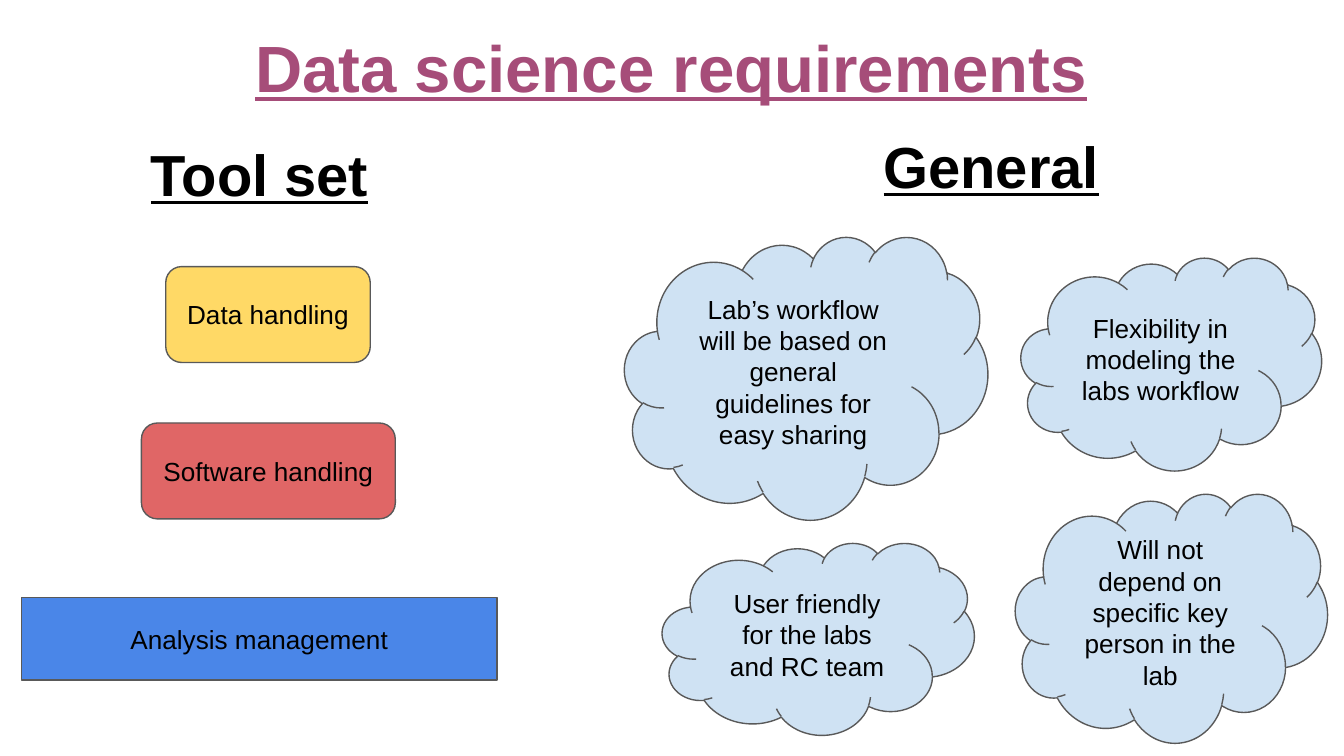
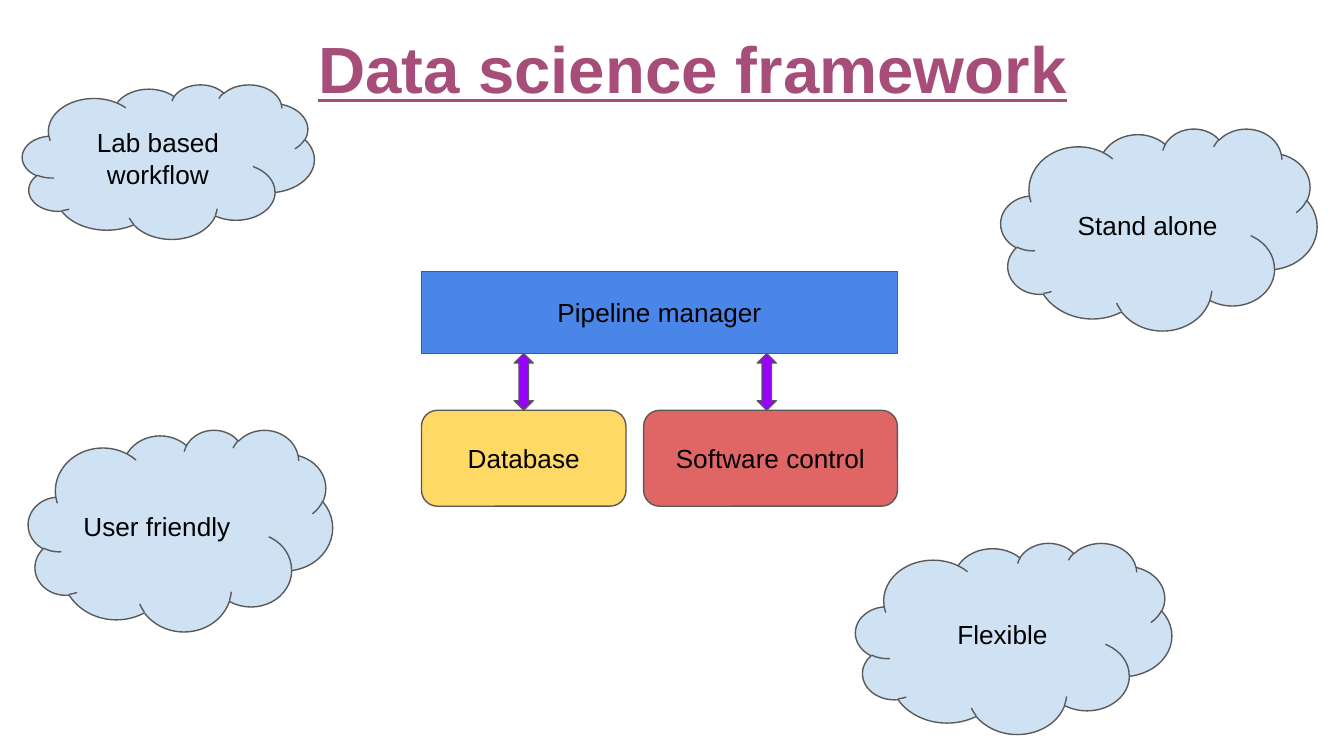
from pptx import Presentation
from pptx.dml.color import RGBColor
from pptx.enum.shapes import MSO_SHAPE
from pptx.enum.text import MSO_ANCHOR, PP_ALIGN
from pptx.util import Pt

# Shared look
FONT = "Arial"
INSET = 7.2
COLORS = {
    "text": "000000", "title": "A64D79", "line": "595959",
    "blue": "4A86E8", "yellow": "FFD966", "red": "E06666",
    "cloud": "CFE2F3", "arrow": "9900FF",
}

# Tool kinds: preset, fill, width, height
TOOLS = {
    "bar": (MSO_SHAPE.RECTANGLE, "blue", 255, 44),
    "data": (MSO_SHAPE.ROUNDED_RECTANGLE, "yellow", 109.6, 51.4),
    "code": (MSO_SHAPE.ROUNDED_RECTANGLE, "red", 136, 51.4),
}

# Slide 1: requirements
NEEDS = ("Data science requirements", (89.3, 3.6, 540.8, 63.4))
HEADS = [
    ("Tool set", (63.4, 67, 151.2, 44)),
    ("General", (360, 62.6, 342, 63.4)),
]
TOOL_SET = [
    ("Analysis management", "bar", 11.4, 320.3),
    ("Data handling", "data", 88.8, 142.8),
    ("Software handling", "code", 75.8, 226.6),
]
GOALS = [
    ("Lab’s workflow will be based on general guidelines for easy sharing",
     (334.6, 126.7, 194.6, 151.5)),
    ("Will not depend on specific key person in the lab",
     (544, 264.4, 167.2, 133.4)),
    ("User friendly for the labs and RC team", (354.8, 290.8, 167.2, 102.8)),
    ("Flexibility in modeling the labs workflow", (547, 138, 161, 114)),
]

# Slide 2: framework
FRAME = ("Data science framework", (161.3, 7.9, 419.8, 37.4))
STACK = ("Pipeline manager", "Database", "Software control")
STACK_X, STACK_Y, STACK_GAP = 225.8, 145.4, 30.4
ARROW_W = 10.2
TRAITS = [
    ("Flexible", (458.4, 290.8, 169.4, 102.4), PP_ALIGN.CENTER),
    ("Lab based workflow", (12, 45.2, 156.4, 82.8), PP_ALIGN.CENTER),
    ("User friendly", (15.2, 230.2, 163, 108), PP_ALIGN.LEFT),
    ("Stand alone", (536.2, 68.8, 169.4, 108.2), PP_ALIGN.CENTER),
]


def color(name):
    return RGBColor.from_string(COLORS[name])


def write(shape, text, size, tint="text", bold=False,
          align=PP_ALIGN.CENTER, anchor=MSO_ANCHOR.MIDDLE):
    frame = shape.text_frame
    frame.text = text
    frame.word_wrap = True
    frame.vertical_anchor = anchor
    frame.margin_left = frame.margin_right = Pt(INSET)
    frame.margin_top = frame.margin_bottom = Pt(INSET)
    para = frame.paragraphs[0]
    para.alignment = align
    font = para.runs[0].font
    font.name, font.size = FONT, Pt(size)
    font.bold = font.underline = bold
    font.color.rgb = color(tint)


def head(slide, text, box, size=31, tint="text", anchor=MSO_ANCHOR.TOP):
    shape = slide.shapes.add_textbox(*map(Pt, box))
    write(shape, text, size, tint, True, anchor=anchor)


def title(slide, text, box, anchor):
    head(slide, text, box, 35, "title", anchor)


def draw(slide, kind, fill, box):
    shape = slide.shapes.add_shape(kind, *map(Pt, box))
    shape.shadow.inherit = False
    shape.fill.solid()
    shape.fill.fore_color.rgb = color(fill)
    shape.line.color.rgb = color("line")
    shape.line.width = Pt(0.75)
    return shape


def tool(slide, text, name, left, top):
    kind, fill, width, height = TOOLS[name]
    write(draw(slide, kind, fill, (left, top, width, height)), text, 14)


def cloud(slide, text, box, align=PP_ALIGN.CENTER):
    write(draw(slide, MSO_SHAPE.CLOUD, "cloud", box), text, 14, align=align)


def needs(slide):
    for item in TOOL_SET:
        tool(slide, *item)
    for text, box in GOALS:
        cloud(slide, text, box)
    for text, box in HEADS:
        head(slide, text, box)
    title(slide, *NEEDS, MSO_ANCHOR.MIDDLE)


def stack(slide):
    wide, high = TOOLS["bar"][2:]
    data_w, code_w = TOOLS["data"][2], TOOLS["code"][2]
    code_x = STACK_X + wide - code_w
    base = STACK_Y + high
    manager, data, code = STACK
    tool(slide, manager, "bar", STACK_X, STACK_Y)
    tool(slide, data, "data", STACK_X, base + STACK_GAP)
    tool(slide, code, "code", code_x, base + STACK_GAP)
    # The right arrow sits 2 pt left of its box centre
    for mid in (STACK_X + data_w / 2, code_x + code_w / 2 - 2):
        draw(slide, MSO_SHAPE.UP_DOWN_ARROW, "arrow",
             (mid - ARROW_W / 2, base, ARROW_W, STACK_GAP))


def frame(slide):
    stack(slide)
    title(slide, *FRAME, MSO_ANCHOR.TOP)
    for item in TRAITS:
        cloud(slide, *item)


def main():
    deck = Presentation()
    deck.slide_width, deck.slide_height = Pt(720), Pt(405)
    for build in (needs, frame):
        build(deck.slides.add_slide(deck.slide_layouts[6]))
    deck.save("out.pptx")


if __name__ == "__main__":
    main()
